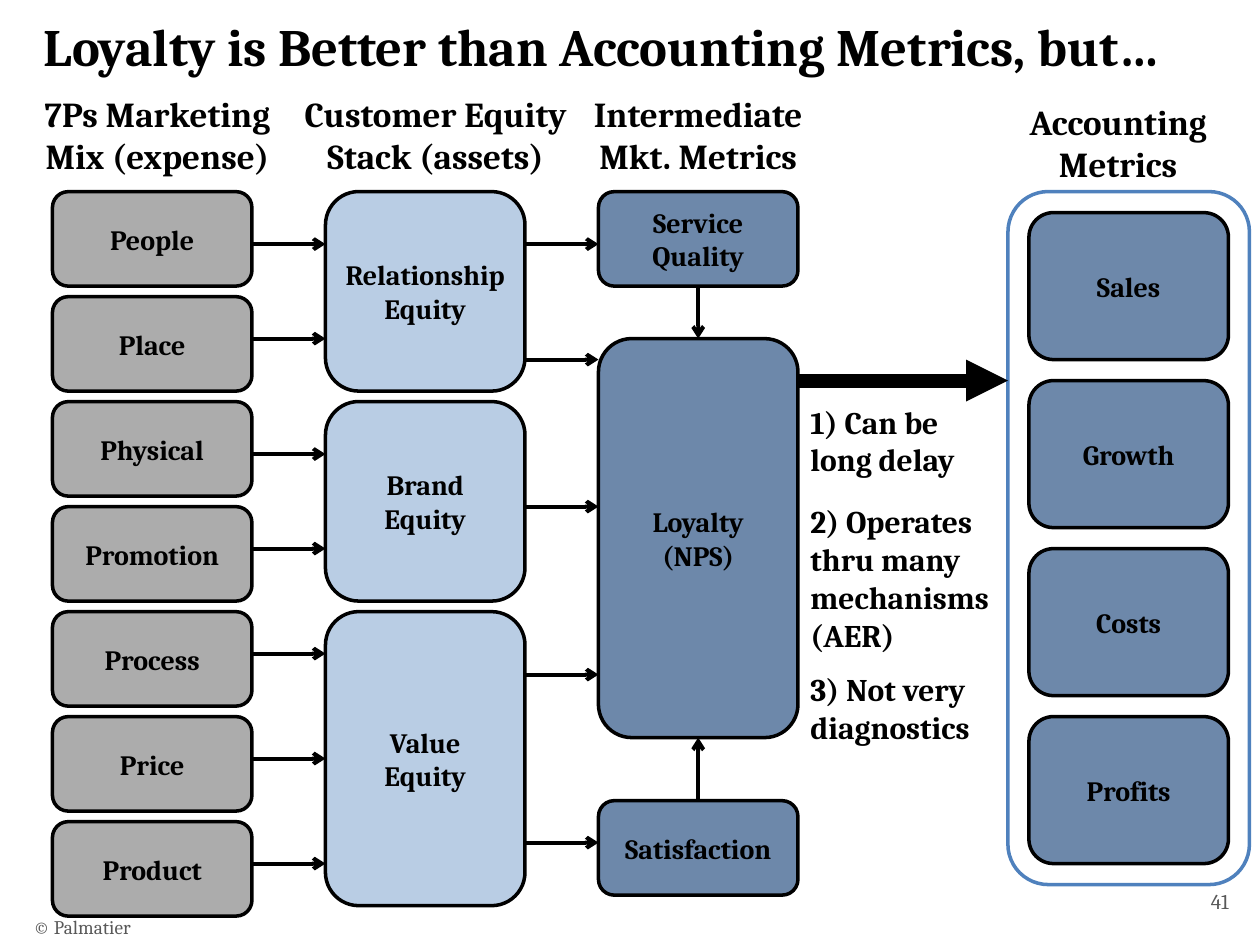
from dataclasses import dataclass

from lxml.etree import SubElement
from pptx import Presentation
from pptx.dml.color import RGBColor
from pptx.enum.shapes import MSO_CONNECTOR as Connector, MSO_SHAPE as Preset
from pptx.enum.text import MSO_ANCHOR as Anchor, PP_ALIGN as Align
from pptx.oxml.ns import qn
from pptx.util import Inches, Pt


@dataclass(frozen=True)
class Theme:
    """Colours, font and type sizes of the slide."""
    font: str = "Cambria"
    ink: str = "000000"
    muted: str = "595959"
    paper: str = "FFFFFF"
    mix: str = "808080"
    equity: str = "95B3D7"
    metric: str = "1F497D"
    frame: str = "4F81BD"
    opacity: int = 65
    title: int = 30
    heading: int = 20
    note: int = 18
    label: int = 16
    number: int = 12
    footer: int = 11
    outline: float = 2
    arrow: float = 2.25
    bold_arrow: float = 8


@dataclass(frozen=True)
class Box:
    """A region in grid columns and rows."""
    left: float
    top: float
    width: float
    height: float

    @property
    def right(self):
        """Return the right edge."""
        return self.left + self.width

    def lengths(self):
        """Return the region as slide lengths."""
        return [grid(n) for n in (self.left, self.top, self.width, self.height)]


THEME = Theme()
COLUMNS, ROWS, CELLS_PER_INCH = 120, 90, 12
TOP, CARD_WIDTH, GAP = 18.25, 19, 1


def grid(cells):
    """Turn grid cells into a slide length."""
    return Inches(cells / CELLS_PER_INCH)


def colour(code):
    """Turn a hex code into a colour."""
    return RGBColor.from_string(code)


def write(frame, text, size, color=THEME.ink, bold=True, align=Align.LEFT,
          anchor=Anchor.TOP, wrap=True):
    """Fill a text frame, one paragraph for each line."""
    frame.word_wrap = wrap
    frame.vertical_anchor = anchor
    for index, line in enumerate(text.split("\n")):
        para = frame.add_paragraph() if index else frame.paragraphs[0]
        para.alignment = align
        span = para.add_run()
        span.text = line
        span.font.name = THEME.font
        span.font.size = Pt(size)
        span.font.bold = bold
        span.font.color.rgb = colour(color)


def add_text(page, box, text, size, **style):
    """Place a text box."""
    write(page.shapes.add_textbox(*box.lengths()).text_frame, text, size, **style)


def add_round(page, box, fill, line):
    """Place an outlined rounded rectangle."""
    shape = page.shapes.add_shape(Preset.ROUNDED_RECTANGLE, *box.lengths())
    shape.shadow.inherit = False
    shape.adjustments[0] = 0.167
    shape.fill.solid()
    shape.fill.fore_color.rgb = colour(fill)
    shape.line.color.rgb = colour(line)
    shape.line.width = Pt(THEME.outline)
    return shape


def add_card(page, box, text, fill):
    """Place a translucent labelled card."""
    card = add_round(page, box, fill, THEME.ink)
    tint = card.fill._xPr.find(qn("a:solidFill"))[0]
    SubElement(tint, qn("a:alpha"), val=str(THEME.opacity * 1000))
    write(card.text_frame, text, THEME.label, align=Align.CENTER,
          anchor=Anchor.MIDDLE, wrap=False)
    return card


def add_stack(page, box, labels, heights, fill, gaps):
    """Stack cards downwards from the top of the box."""
    cards, top = [], box.top
    for label, height, gap in zip(labels, heights, gaps):
        cards.append(add_card(page, Box(box.left, top, box.width, height), label, fill))
        top += height + gap
    return cards


def side_at(card, x, y):
    """Return the side whose middle is at the point, or None."""
    middle_x, middle_y = card.left + card.width / 2, card.top + card.height / 2
    middles = ((middle_x, card.top), (card.left, middle_y),
               (middle_x, card.top + card.height), (card.left + card.width, middle_y))
    for side, (side_x, side_y) in enumerate(middles):
        if max(abs(side_x - x), abs(side_y - y)) < Pt(0.1):
            return side
    return None


def add_arrow(page, start, end, cards, width=THEME.arrow, head="arrow"):
    """Draw an arrow and join it to cards at the middle of their sides."""
    points = [[grid(n) for n in point] for point in (start, end)]
    arrow = page.shapes.add_connector(Connector.STRAIGHT, *points[0], *points[1])
    arrow.line.color.rgb = colour(THEME.ink)
    arrow.line.width = Pt(width)
    SubElement(arrow.line._get_or_add_ln(), qn("a:tailEnd"), type=head)
    SubElement(arrow._element.spPr, qn("a:effectLst"))
    for join, point in zip((arrow.begin_connect, arrow.end_connect), points):
        for card in cards:
            side = side_at(card, *point)
            if side is not None:
                join(card, side)


def add_flow(page, box, offsets, cards):
    """Draw arrows across the box at the given rows."""
    for offset in offsets:
        row = box.top + offset
        add_arrow(page, (box.left, row), (box.right, row), cards)


def add_headings(page):
    """Place the title and the column headings."""
    add_text(page, Box(3, 0.75, 116, 10),
             "Loyalty is Better than Accounting Metrics, but…", THEME.title)
    for left, top, width, text in (
            (0, 8.25, 30, "7Ps Marketing Mix (expense)"),
            (26, 8.25, 31, "Customer Equity Stack (assets)"),
            (52, 8.25, 29, "Intermediate Mkt. Metrics"),
            (92, 9, 29, "Accounting Metrics")):
        add_text(page, Box(left, top, width, 9.25), text, THEME.heading, align=Align.CENTER)


def add_chain(page, box):
    """Place the marketing mix, equity and metric columns with their arrows."""
    pitch = (box.width - CARD_WIDTH) / 2
    mix, equity, metric = [Box(box.left + pitch * i, box.top, CARD_WIDTH, box.height)
                           for i in range(3)]
    names = ("People", "Place", "Physical", "Promotion", "Process", "Price", "Product")
    cards = add_stack(page, mix, names, [9] * 7, THEME.mix, [GAP] * 7)
    cards += add_stack(page, equity, ("Relationship\nEquity", "Brand\nEquity", "Value\nEquity"),
                       (19, 19, 28), THEME.equity, [GAP] * 3)
    cards += add_stack(page, metric, ("Service\nQuality", "Loyalty\n(NPS)", "Satisfaction"),
                       (9, 38, 9), THEME.metric, (5, 6, 0))
    space = pitch - CARD_WIDTH
    add_flow(page, Box(mix.right, box.top, space, box.height),
             (5, 14, 25, 34, 44, 54, 64), cards)
    add_flow(page, Box(equity.right, box.top, space, box.height),
             (5, 16, 30, 46, 62), cards)
    centre = metric.left + CARD_WIDTH / 2
    for start, end in ((9, 14), (58, 52)):
        add_arrow(page, (centre, box.top + start), (centre, box.top + end), cards)


def add_accounting(page, box):
    """Place the framed column of accounting metrics."""
    add_round(page, box, THEME.paper, THEME.frame)
    inner = Box(box.left + 2, box.top + 2, box.width - 4, box.height - 4)
    add_stack(page, inner, ("Sales", "Growth", "Costs", "Profits"),
              [14] * 4, THEME.metric, [2] * 4)


def add_notes(page, box):
    """Place the heavy arrow and the caveats under it."""
    add_arrow(page, (box.left, box.top), (box.right, box.top), (),
              width=THEME.bold_arrow, head="triangle")
    for offset, width, height, text in (
            (1.5, 18, 8.5, "1) Can be long delay"),
            (11, 21, 15.75, "2) Operates thru many mechanisms (AER)"),
            (27, 20, 8.5, "3) Not very diagnostics")):
        add_text(page, Box(box.left, box.top + offset, width, height), text, THEME.note)


def add_footer(page):
    """Place the page number and the credit."""
    style = dict(color=THEME.muted, bold=False, anchor=Anchor.MIDDLE)
    add_text(page, Box(110.9, 83.4, 7.3, 4.8), "41", THEME.number, align=Align.RIGHT, **style)
    add_text(page, Box(2, 85.9, 80.4, 4.8), "© Palmatier", THEME.footer, **style)


def main():
    """Build and save the deck."""
    deck = Presentation()
    deck.slide_width, deck.slide_height = grid(COLUMNS), grid(ROWS)
    page = deck.slides.add_slide(deck.slide_layouts[6])
    add_headings(page)
    add_chain(page, Box(5, TOP, 71, 69))
    add_accounting(page, Box(96, TOP, 23, 66))
    add_notes(page, Box(76, TOP + 18, 20, 36))
    add_footer(page)
    deck.save("out.pptx")


if __name__ == "__main__":
    main()
